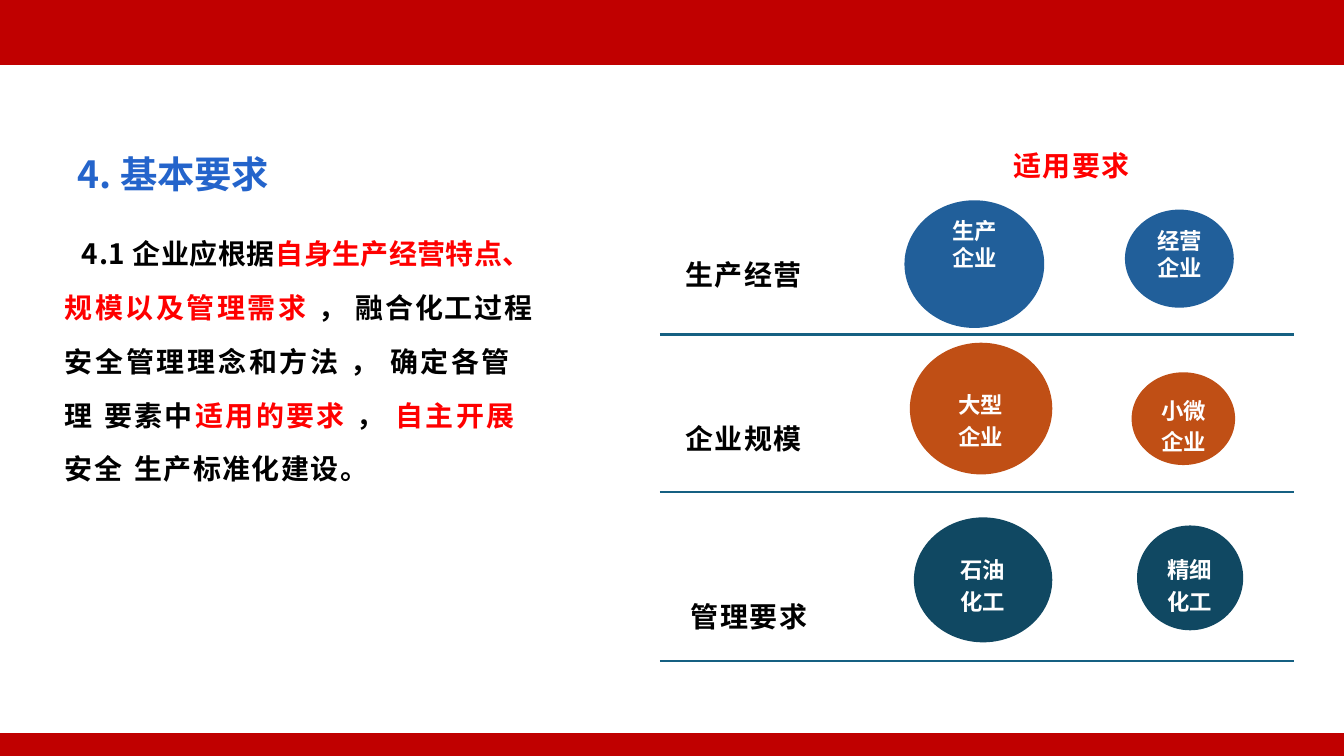
from lxml import etree
from pptx import Presentation
from pptx.dml.color import RGBColor
from pptx.enum.shapes import MSO_SHAPE
from pptx.enum.text import MSO_ANCHOR, PP_ALIGN
from pptx.oxml.ns import qn
from pptx.util import Inches, Pt

RECT, OVAL = MSO_SHAPE.RECTANGLE, MSO_SHAPE.OVAL
MIDDLE, TOP = MSO_ANCHOR.MIDDLE, MSO_ANCHOR.TOP
LEFT, CENTER = PP_ALIGN.LEFT, PP_ALIGN.CENTER
FONT = "Noto Sans CJK SC"
CRIMSON = RGBColor(0xC0, 0x00, 0x00)
RED = RGBColor(0xFF, 0x00, 0x00)
BLACK = RGBColor(0x00, 0x00, 0x00)
WHITE = RGBColor(0xFF, 0xFF, 0xFF)
TITLE = RGBColor(0x24, 0x64, 0xCB)
BLUE = RGBColor(0x21, 0x5F, 0x9A)
ORANGE = RGBColor(0xC0, 0x4F, 0x15)
TEAL = RGBColor(0x10, 0x48, 0x62)
RULE = RGBColor(0x15, 0x60, 0x82)

BARS = [(-0.01, 0.49), (5.46, 0.16)]
HEAD = [("4. 基本要求", TITLE, -0.1)]
LEAD = [("4.1 企业应根据", BLACK, 0.3), ("自身生产经营特点、", RED, 0.2)]
BODY = [
    ("规模以及管理需求 ", RED, 1.4), ("， 融合化工过程 ", BLACK, 0.9),
    ("安全管理理念和方法 ", BLACK, 1.5), ("， 确定各管理 ", BLACK, 1.4),
    ("要素中", BLACK, 1.3), ("适用的要求 ", RED, 1.3), ("， ", BLACK, 1.3),
    ("自主开展", RED, 1.3), ("安全 ", BLACK, 1.3), ("生产标准化建设。", BLACK, 0.8),
]
LABELS = [("生产经营", 5.1, 1.89, BLACK), ("适用要求", 7.54, 1.08, RED)]
DISCS = [
    (6.77, 2.55, 1.06, 0.98, ORANGE),
    (8.42, 2.77, 0.77, 0.69, ORANGE),
    (8.46, 3.91, 0.79, 0.78, TEAL),
    (6.8, 3.85, 1.03, 0.93, TEAL),
]
FIRMS = [
    (6.73, 1.49, 1.04, 0.95, ["生产", "企业"], 0.3),
    (8.37, 1.56, 0.81, 0.73, ["经营", "企业"], 0.07),
]
COLS, ROWS = [1.89, 1.03, 1.8], [1.17, 1.26]
CELLS = [
    [(["企业规模"], 0.19, 0.64), (["大型", "企业"], 0.33, 0.4),
     (["小微", "企业"], 0.81, 0.44)],
    [(["管理要求"], 0.23, 0.79), (["石油", "化工"], 0.35, 0.46),
     (["精细", "化工"], 0.86, 0.46)],
]


def write(para, parts, size=15, pitch=20, align=LEFT, before=0, left=0):
    para.alignment = align
    para.line_spacing = Pt(pitch)
    para.space_before = Pt(before)
    shape = para._p.get_or_add_pPr()
    shape.set("marL", str(Inches(left)))
    shape.set("indent", "0")
    for text, color, gap in parts:
        run = para.add_run()
        run.text = text
        font = run.font
        font.name, font.size, font.bold = FONT, Pt(size), True
        font.color.rgb = color
        props = font._element
        props.set("spc", str(round(gap * 100)))
        etree.SubElement(props, qn("a:ea")).set("typeface", FONT)


def stack(frame, words, color, gap, **look):
    for i, word in enumerate(words):
        para = frame.add_paragraph() if i else frame.paragraphs[0]
        write(para, [(word, color, gap)], **look)


def pad(item, left=0, top=0, right=0, bottom=0):
    item.margin_left, item.margin_top = Inches(left), Inches(top)
    item.margin_right, item.margin_bottom = Inches(right), Inches(bottom)


def draw(kind, x, y, w, h, color):
    shape = slide.shapes.add_shape(kind, Inches(x), Inches(y), Inches(w), Inches(h))
    shape.shadow.inherit = False
    shape.fill.solid()
    shape.fill.fore_color.rgb = color
    shape.line.fill.background()
    return shape


def box(x, y, w, h):
    frame = slide.shapes.add_textbox(
        Inches(x), Inches(y), Inches(w), Inches(h)).text_frame
    frame.word_wrap = True
    pad(frame)
    return frame


def edge(cell):
    props = cell._tc.get_or_add_tcPr()
    for i, side in enumerate(["lnL", "lnR", "lnT", "lnB"]):
        line = etree.Element(qn("a:" + side))
        if side in ("lnT", "lnB"):
            line.set("w", str(Pt(1.5)))
            fill = etree.SubElement(line, qn("a:solidFill"))
            etree.SubElement(fill, qn("a:srgbClr")).set("val", str(RULE))
        else:
            etree.SubElement(line, qn("a:noFill"))
        props.insert(i, line)


deck = Presentation()
deck.slide_width = Inches(10)
deck.slide_height = deck.slide_width * 9 // 16
slide = deck.slides.add_slide(deck.slide_layouts[6])

for y, h in BARS:
    bar = draw(RECT, 0, y, 10, h, CRIMSON)
    bar.line.color.rgb = CRIMSON
    bar.line.width = Pt(1)
for disc in DISCS:
    draw(OVAL, *disc)

table = slide.shapes.add_table(
    len(ROWS), len(COLS), Inches(4.91), Inches(2.49),
    Inches(sum(COLS)), Inches(sum(ROWS))).table
table.first_row = table.horz_banding = False
for col, w in zip(table.columns, COLS):
    col.width = Inches(w)
for r, (h, row) in enumerate(zip(ROWS, CELLS)):
    table.rows[r].height = Inches(h)
    for c, (words, left, top) in enumerate(row):
        cell = table.cell(r, c)
        cell.fill.background()
        cell.vertical_anchor = TOP
        pad(cell, left, top)
        edge(cell)
        color, size, pitch, gap = (WHITE, 12, 17, -0.2) if c else (BLACK, 15, 20, 0.8)
        stack(cell.text_frame, words, color, gap, size=size, pitch=pitch)

frame = box(0.48, 1.07, 3.52, 2.55)
write(frame.paragraphs[0], HEAD, size=20, pitch=28, left=0.1)
write(frame.add_paragraph(), LEAD, pitch=28.8, before=11, left=0.13)
write(frame.add_paragraph(), BODY, pitch=28.8)

for x, y, w, h, words, low in FIRMS:
    frame = draw(OVAL, x, y, w, h, BLUE).text_frame
    frame.vertical_anchor = MIDDLE
    pad(frame, bottom=low)
    stack(frame, words, WHITE, -0.2, size=12, pitch=14.5, align=CENTER)

for text, x, y, color in LABELS:
    write(box(x, y, 0.95, 0.28).paragraphs[0], [(text, color, 0.8)])

deck.save("out.pptx")
